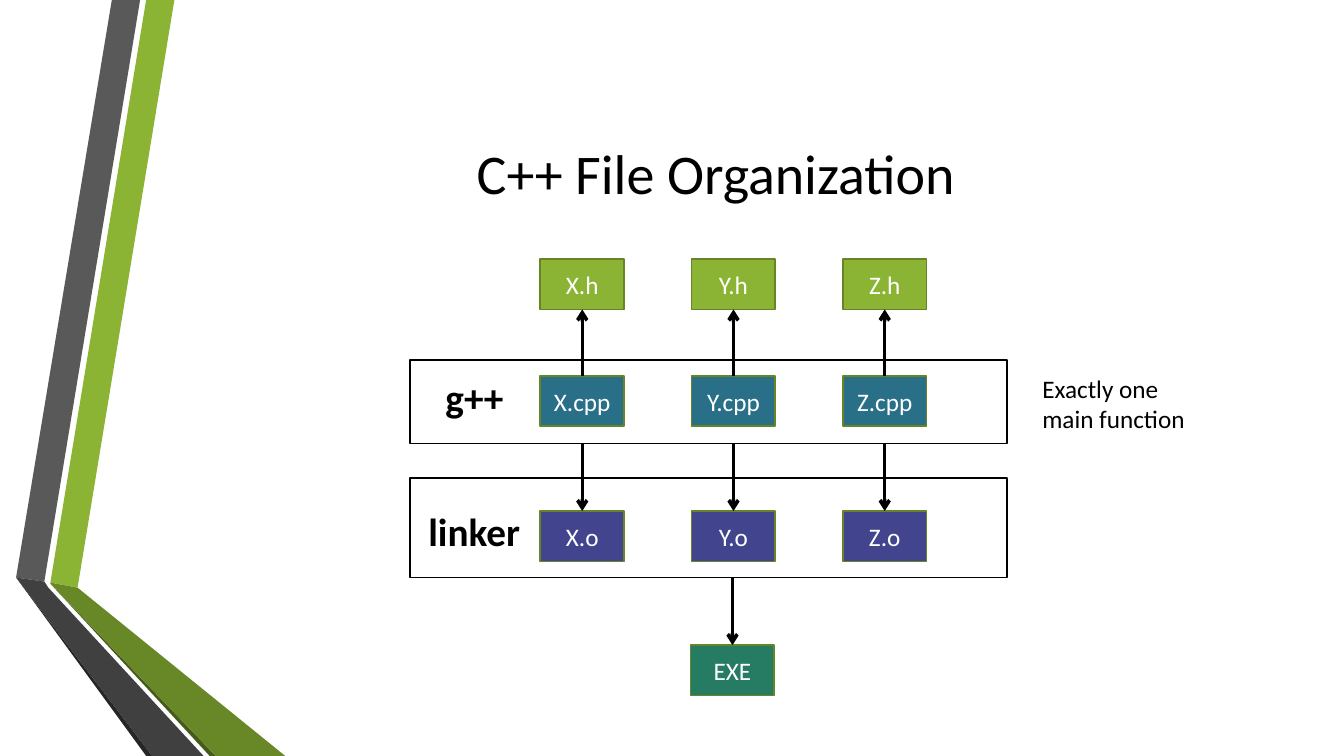
from dataclasses import dataclass
from typing import Any, Optional

from lxml.etree import SubElement
from pptx import Presentation
from pptx.dml.color import RGBColor
from pptx.enum.shapes import MSO_CONNECTOR, MSO_SHAPE
from pptx.enum.text import MSO_ANCHOR, PP_ALIGN
from pptx.oxml.ns import qn
from pptx.util import Inches, Pt

COLOURS = {
    "black": "000000",
    "white": "FFFFFF",
    "header": "8BB434",
    "source": "286F87",
    "object": "42458D",
    "program": "267C62",
    "border": "678526",
    "grey": "595959",
    "dark grey": "404040",
    "grey edge": "262626",
    "dark green": "688727",
    "green edge": "465A1A",
}
BOX_WIDTH, BOX_HEIGHT = 0.83, 0.5
FIRST_LEFT, COLUMN_STEP = 5.36, 1.5
HEADER_TOP, SOURCE_TOP, OBJECT_TOP = 2.57, 3.73, 5.07
FRAME_LEFT, FRAME_WIDTH = 4.07, 5.92


@dataclass
class Ribbon:
    colour: str
    points: list[tuple[float, float]]


@dataclass
class Stage:
    top: float
    height: float


@dataclass
class Label:
    text: str
    left: float
    top: float
    width: float
    height: float
    size: int
    bold: bool = False


RIBBONS = [
    Ribbon("header", [(0.5, 5.78), (0.77, 5.83), (1.73, 0), (1.45, 0)]),
    Ribbon("grey", [(1.39, 0), (1.11, 0), (0.16, 5.73), (0.44, 5.77)]),
    Ribbon("grey edge", [(0.16, 5.73), (1.45, 7.5), (1.51, 7.5)]),
    Ribbon("green edge", [(0.5, 5.79), (2.08, 7.5), (2.14, 7.5)]),
    Ribbon("dark green", [(0.5, 5.78), (0.5, 5.79), (2.14, 7.5), (2.83, 7.5), (0.77, 5.83)]),
    Ribbon("dark grey", [(2.02, 7.5), (0.48, 5.83), (0.44, 5.77), (0.16, 5.73), (1.51, 7.5)]),
]
COMPILER = Stage(3.57, 0.83)
LINKER = Stage(4.74, 0.99)
LABELS = [
    Label("g++", 4.32, 3.65, 0.83, 0.57, 28, True),
    Label("linker", 4.15, 4.98, 1.15, 0.57, 28, True),
    Label("Exactly one\nmain function", 10.24, 3.65, 1.63, 0.71, 18),
]


def colour_of(name: str) -> RGBColor:
    return RGBColor.from_string(COLOURS[name])


def set_values(target: Any, values: dict[str, Any]) -> None:
    for name, value in values.items():
        setattr(target, name, value)


def write_text(frame: Any, text: str, size: int, colour: str,
               align: PP_ALIGN, bold: bool = False) -> None:
    for index, line in enumerate(text.split("\n")):
        para = frame.paragraphs[0] if index == 0 else frame.add_paragraph()
        para.alignment = align
        span = para.add_run()
        span.text = line
        set_values(span.font, {"name": "Calibri", "size": Pt(size), "bold": bold})
        span.font.color.rgb = colour_of(colour)


def draw_ribbon(page: Any, ribbon: Ribbon) -> None:
    corners = [(Inches(x), Inches(y)) for x, y in ribbon.points]
    builder = page.shapes.build_freeform(*corners[0])
    builder.add_line_segments(corners[1:], close=True)
    shape = builder.convert_to_shape()
    shape.shadow.inherit = False
    shape.fill.solid()
    shape.fill.fore_color.rgb = colour_of(ribbon.colour)
    shape.line.fill.background()


def draw_rectangle(page: Any, left: float, top: float, width: float, height: float,
                   border: str) -> Any:
    box = page.shapes.add_shape(MSO_SHAPE.RECTANGLE, Inches(left), Inches(top),
                                Inches(width), Inches(height))
    box.shadow.inherit = False
    box.fill.background()
    box.line.color.rgb = colour_of(border)
    box.line.width = Pt(1.25)
    return box


def draw_file(page: Any, text: str, left: float, top: float, fill: str) -> Any:
    box = draw_rectangle(page, left, top, BOX_WIDTH, BOX_HEIGHT, "border")
    box.fill.solid()
    box.fill.fore_color.rgb = colour_of(fill)
    set_values(box.text_frame, {"vertical_anchor": MSO_ANCHOR.MIDDLE, "word_wrap": True,
                                "margin_left": 0, "margin_right": 0})
    write_text(box.text_frame, text, 18, "white", PP_ALIGN.CENTER)
    return box


def draw_arrow(page: Any, start_top: float, target: Any, target_side: int,
               origin: Optional[Any] = None) -> None:
    middle = target.left + target.width // 2
    arrow = page.shapes.add_connector(MSO_CONNECTOR.STRAIGHT, middle, Inches(start_top),
                                      middle, target.top)
    if origin is not None:
        arrow.begin_connect(origin, 0)
    arrow.end_connect(target, target_side)
    arrow.line.color.rgb = colour_of("black")
    arrow.line.width = Pt(2.5)
    SubElement(arrow.line._get_or_add_ln(), qn("a:tailEnd"), type="arrow")
    SubElement(arrow._element.spPr, qn("a:effectLst"))


def draw_column(page: Any, name: str, left: float) -> None:
    header = draw_file(page, f"{name}.h", left, HEADER_TOP, "header")
    source = draw_file(page, f"{name}.cpp", left, SOURCE_TOP, "source")
    compiled = draw_file(page, f"{name}.o", left, OBJECT_TOP, "object")
    draw_arrow(page, SOURCE_TOP, header, 2, source)
    draw_arrow(page, COMPILER.top + COMPILER.height, compiled, 0)


def draw_label(page: Any, label: Label) -> None:
    box = page.shapes.add_textbox(Inches(label.left), Inches(label.top),
                                  Inches(label.width), Inches(label.height))
    box.text_frame.word_wrap = False
    write_text(box.text_frame, label.text, label.size, "black", PP_ALIGN.LEFT, label.bold)


def draw_title(page: Any, text: str) -> None:
    title = page.shapes.title
    set_values(title, {"left": Inches(1.62), "top": Inches(0.75),
                       "width": Inches(10.96), "height": Inches(1.92)})
    title.text_frame.vertical_anchor = MSO_ANCHOR.MIDDLE
    write_text(title.text_frame, text, 40, "black", PP_ALIGN.CENTER)


def main() -> None:
    deck = Presentation()
    set_values(deck, {"slide_width": Inches(13.33), "slide_height": Inches(7.5)})
    page = deck.slides.add_slide(deck.slide_layouts[5])
    for ribbon in RIBBONS:
        draw_ribbon(page, ribbon)
    draw_title(page, "C++ File Organization")
    for index, name in enumerate("XYZ"):
        draw_column(page, name, FIRST_LEFT + index * COLUMN_STEP)
    for stage in (COMPILER, LINKER):
        draw_rectangle(page, FRAME_LEFT, stage.top, FRAME_WIDTH, stage.height, "black")
    program = draw_file(page, "EXE", 6.85, 6.4, "program")
    draw_arrow(page, LINKER.top + LINKER.height, program, 0)
    for label in LABELS:
        draw_label(page, label)
    deck.save("out.pptx")


if __name__ == "__main__":
    main()
